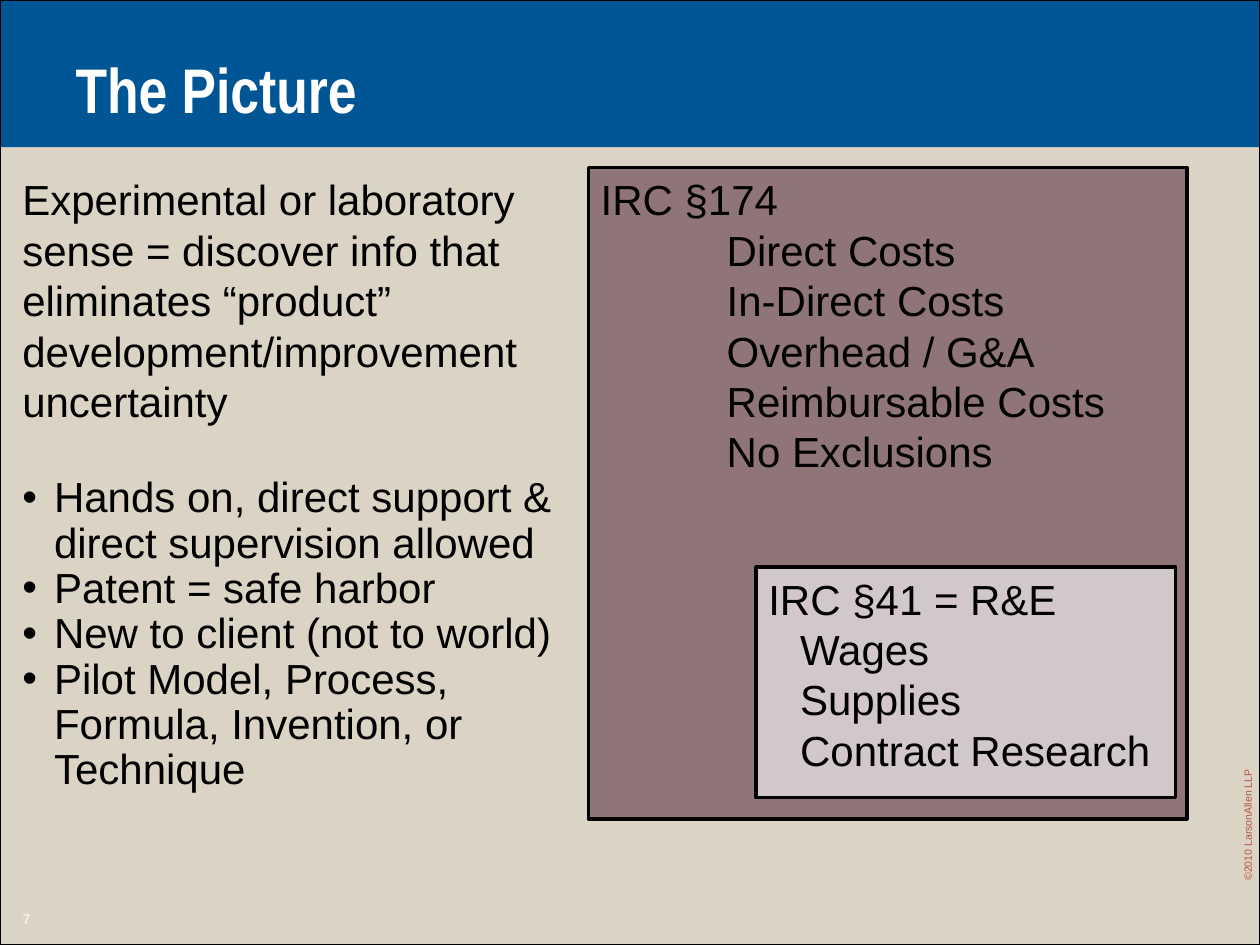
from lxml import etree
from pptx import Presentation
from pptx import util as u
from pptx.dml.color import RGBColor
from pptx.enum import shapes, text
from pptx.oxml.ns import qn


def color(code):
    return RGBColor.from_string(code)


def style(frame, size, code, font="Arial", bold=False):
    for par in frame.paragraphs:
        for run in par.runs:
            run.font.name = font
            run.font.size = u.Pt(size)
            run.font.bold = bold
            run.font.color.rgb = color(code)


prs = Presentation()
prs.slide_width, prs.slide_height = u.Cm(25.4), u.Cm(19.05)
slide = prs.slides.add_slide(prs.slide_layouts[5])
slide.background.fill.solid()
slide.background.fill.fore_color.rgb = color("DBD4C5")
title = slide.shapes.title

# Header band, page frame and the two nested cost boxes
# left, top, width, height, fill, line width, tab stop, lines
boxes = [
    (0, 0, 25.4, 2.97, "005595", 0, 0, []),
    (0, 0, 25.4, 19.05, None, 0.75, 0, []),
    (11.86, 3.38, 12.07, 13.13, "907578", 2, 2.54,
     ["IRC §174", "Direct Costs", "In-Direct Costs", "Overhead / G&A",
      "Reimbursable Costs", "No Exclusions"]),
    (15.24, 11.43, 8.46, 4.65, "D3C8C9", 2, 0.64,
     ["IRC §41 = R&E", "Wages", "Supplies", "Contract Research"]),
]
for left, top, wide, high, fill, line, stop, lines in boxes:
    box = slide.shapes.add_shape(shapes.MSO_SHAPE.RECTANGLE, u.Cm(left),
                                 u.Cm(top), u.Cm(wide), u.Cm(high))
    box.shadow.inherit = False
    if fill:
        box.fill.solid()
        box.fill.fore_color.rgb = color(fill)
    else:
        box.fill.background()
    if line:
        box.line.color.rgb = color("000000")
        box.line.width = u.Pt(line)
    else:
        box.line.fill.background()
    if not lines:
        continue
    frame = box.text_frame
    frame.word_wrap = False
    frame.vertical_anchor = text.MSO_ANCHOR.TOP
    frame.text = "\n\t".join(lines)
    for par in frame.paragraphs:
        par.alignment = text.PP_ALIGN.LEFT
        tabs = etree.SubElement(par._p.get_or_add_pPr(), qn("a:tabLst"))
        etree.SubElement(tabs, qn("a:tab"), pos=str(u.Cm(stop)), algn="l")
    style(frame, 24, "000000")

# Title, above the band
title.left, title.top = u.Cm(1.27), u.Cm(0.84)
title.width, title.height = u.Cm(22.86), u.Cm(1.9)
title.text_frame.text = "The Picture"
title.text_frame.vertical_anchor = text.MSO_ANCHOR.MIDDLE
title.text_frame.paragraphs[0].alignment = text.PP_ALIGN.LEFT
style(title.text_frame, 36, "FFFFFF", "Arial Narrow", True)
slide.shapes._spTree.append(title._element)

# Definition, copyright line and page number
notes = [
    (0.2, 3.38, 11.23, 13.89, 0, 24, "000000", [
        "Experimental or laboratory sense = discover info that eliminates "
        "“product” development/improvement uncertainty",
        "Hands on, direct support & direct supervision allowed",
        "Patent = safe harbor",
        "New to client (not to world)",
        "Pilot Model, Process, Formula, Invention, or Technique"]),
    (23.67, 16.26, 2.97, 0.51, 270, 6, "B55341", ["©2010 LarsonAllen LLP"]),
    (0, 18.24, 1.07, 0.58, 0, 8, "FFFFFF", ["7"]),
]
for left, top, wide, high, turn, size, code, lines in notes:
    box = slide.shapes.add_textbox(u.Cm(left), u.Cm(top), u.Cm(wide), u.Cm(high))
    box.rotation = turn
    frame = box.text_frame
    frame.word_wrap = True
    frame.text = "\n".join(lines)
    # Every line after the first is a bullet
    for par in frame.paragraphs[1:]:
        props = par._p.get_or_add_pPr()
        props.set("marL", str(u.Cm(0.64)))
        props.set("indent", str(-u.Cm(0.64)))
        etree.SubElement(props, qn("a:buFont"), typeface="Arial")
        etree.SubElement(props, qn("a:buChar"), char="•")
        par.line_spacing = 0.9
    style(frame, size, code)
    if len(lines) > 1:
        frame.paragraphs[1].space_before = u.Pt(29)
    elif not turn:
        frame.paragraphs[0].alignment = text.PP_ALIGN.CENTER

prs.save("out.pptx")
